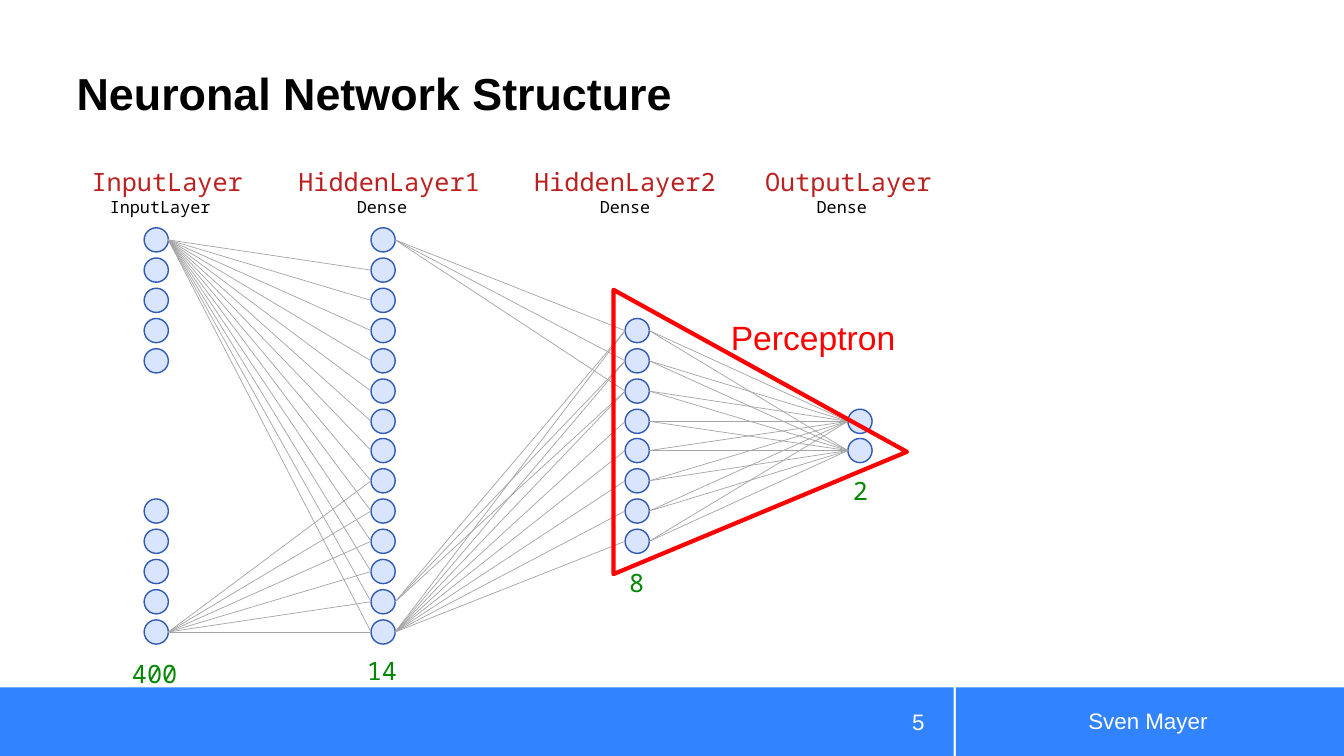
from dataclasses import dataclass

from lxml.etree import SubElement
from pptx import Presentation
from pptx.dml.color import RGBColor
from pptx.enum.shapes import MSO_CONNECTOR as Connector, MSO_SHAPE as Preset
from pptx.enum.text import MSO_ANCHOR as Anchor, MSO_AUTO_SIZE as AutoSize, PP_ALIGN as Align
from pptx.oxml.ns import qn
from pptx.shapes.base import BaseShape
from pptx.slide import Slide
from pptx.text.text import TextFrame
from pptx.util import Emu, Pt

EMU_PER_PX = 9144  # 100 px to the inch
NODE = 24
FIRST_ROW_TOP, LAST_ROW_TOP, LAST_ROW = 226, 615, 13
SANS, MONO = "Arial", "Noto Sans Mono"
COLORS = {
    "bar": "3183FF",
    "node": "D9E5FF",
    "node_edge": "315AB5",
    "link": "A5A5A5",
    "count": "008800",
    "layer": "BA2120",
    "perceptron": "FF0000",
    "black": "000000",
    "white": "FFFFFF",
}


@dataclass(frozen=True)
class Layer:
    left: int
    rows: tuple[int, ...]


@dataclass(frozen=True)
class Fan:
    """Links from one node to several rows of the next layer."""
    source: Layer
    row: int
    target: Layer
    target_rows: tuple[int, ...]


@dataclass(frozen=True)
class Caption:
    text: str
    box: tuple[int, int, int, int]
    size: int
    color: str
    font: str = MONO
    align: Align = Align.LEFT
    anchor: Anchor = Anchor.TOP
    wrap: bool = False


INPUT = Layer(143, (*range(5), *range(9, 14)))
HIDDEN_1 = Layer(368, tuple(range(14)))
HIDDEN_2 = Layer(620, tuple(range(3, 11)))
OUTPUT = Layer(841, (6, 7))
LAYERS = (HIDDEN_1, OUTPUT, HIDDEN_2, INPUT)

FANS = (
    Fan(INPUT, 0, HIDDEN_1, HIDDEN_1.rows[1:]),
    Fan(INPUT, 13, HIDDEN_1, HIDDEN_1.rows[8:]),
    Fan(HIDDEN_1, 13, HIDDEN_2, HIDDEN_2.rows),
    Fan(HIDDEN_1, 12, HIDDEN_2, HIDDEN_2.rows[:3]),
    Fan(HIDDEN_1, 0, HIDDEN_2, HIDDEN_2.rows[:3]),
    *(Fan(HIDDEN_2, row, OUTPUT, OUTPUT.rows) for row in HIDDEN_2.rows),
)

FOOTER_BARS = ((0, 682, 946, 68), (948, 682, 385, 68))
FOOTER = (
    Caption("Sven Mayer", (961, 695, 355, 40), 16, "white", SANS, Align.CENTER, Anchor.MIDDLE, True),
    Caption("5", (841, 696, 86, 40), 16, "white", SANS, Align.RIGHT, Anchor.MIDDLE, True),
)
NODE_COUNTS = tuple(
    Caption(count, (left, top, width, 40), 18, "count")
    for count, left, top, width in (
        ("14", 354, 645, 50), ("8", 614, 558, 35), ("2", 836, 467, 35), ("400", 121, 648, 68))
)
LAYER_NAMES = tuple(
    Caption(name, (left, 160, width, 40), 18, "layer")
    for name, left, width in (
        ("InputLayer", 81, 171), ("HiddenLayer1", 286, 201),
        ("HiddenLayer2", 520, 201), ("OutputLayer", 749, 186))
)
LAYER_TYPES = (
    Caption("InputLayer", (99, 190, 122, 30), 12, "black"),
    *(Caption("Dense", (left, 190, 234, 30), 12, "black", align=Align.CENTER, wrap=True)
      for left in (262, 503, 718)),
)
PERCEPTRON = Caption("Perceptron", (715, 309, 185, 50), 24, "perceptron", SANS)


def px(*lengths: int) -> list[Emu]:
    return [Emu(length * EMU_PER_PX) for length in lengths]


def rgb(name: str) -> RGBColor:
    return RGBColor.from_string(COLORS[name])


def row_top(row: int) -> int:
    return round(FIRST_ROW_TOP + (LAST_ROW_TOP - FIRST_ROW_TOP) * row / LAST_ROW)


def paint(shape: BaseShape, fill: str | None, edge: str | None = None, width: float = 1) -> None:
    shape.shadow.inherit = False
    if fill:
        shape.fill.solid()
        shape.fill.fore_color.rgb = rgb(fill)
    else:
        shape.fill.background()
    if edge:
        shape.line.color.rgb = rgb(edge)
        shape.line.width = Pt(width)
    else:
        shape.line.fill.background()


def write(frame: TextFrame, caption: Caption, bold: bool = False) -> None:
    frame.word_wrap = caption.wrap
    frame.auto_size = AutoSize.NONE
    frame.vertical_anchor = caption.anchor
    paragraph = frame.paragraphs[0]
    paragraph.alignment = caption.align
    run = paragraph.add_run()
    run.text = caption.text
    run.font.name = caption.font
    run.font.size = Pt(caption.size)
    run.font.bold = bold
    run.font.color.rgb = rgb(caption.color)


def add_captions(slide: Slide, captions: tuple[Caption, ...]) -> None:
    for caption in captions:
        write(slide.shapes.add_textbox(*px(*caption.box)).text_frame, caption)


def set_title(slide: Slide) -> None:
    caption = Caption("Neuronal Network Structure", (76, 13, 870, 106), 32, "black", SANS,
                      anchor=Anchor.BOTTOM, wrap=True)
    title = slide.shapes.title
    title.left, title.top, title.width, title.height = px(*caption.box)
    frame = title.text_frame
    frame.margin_left = frame.margin_right = frame.margin_top = frame.margin_bottom = 0
    write(frame, caption, bold=True)
    frame.paragraphs[0].line_spacing = 0.9


def add_footer(slide: Slide) -> None:
    for bar in FOOTER_BARS:
        paint(slide.shapes.add_shape(Preset.RECTANGLE, *px(*bar)), "bar")
    add_captions(slide, FOOTER)


def add_layer(slide: Slide, layer: Layer) -> None:
    group = slide.shapes.add_group_shape()
    for row in layer.rows:
        box = px(layer.left, row_top(row), NODE, NODE)
        paint(group.shapes.add_shape(Preset.OVAL, *box), "node", "node_edge")


def add_fan(slide: Slide, fan: Fan) -> None:
    start = px(fan.source.left + NODE, row_top(fan.row) + NODE // 2)
    for row in fan.target_rows:
        end = px(fan.target.left, row_top(row) + NODE // 2)
        link = slide.shapes.add_connector(Connector.STRAIGHT, *start, *end)
        link.line.color.rgb = rgb("link")
        link.line.width = Pt(0.5)
        SubElement(link._element.spPr, qn("a:effectLst"))


def add_perceptron(slide: Slide) -> None:
    outline = slide.shapes.add_shape(Preset.ISOSCELES_TRIANGLE, *px(613, 283, 282, 291))
    outline.rotation = 90
    outline.adjustments[0] = 0.57
    paint(outline, None, "perceptron", 3)
    add_captions(slide, (PERCEPTRON,))


def main() -> None:
    deck = Presentation()
    deck.slide_width, deck.slide_height = px(1333, 750)
    slide = deck.slides.add_slide(deck.slide_layouts.get_by_name("Title Only"))
    set_title(slide)
    add_footer(slide)
    for layer in LAYERS:
        add_layer(slide, layer)
    add_captions(slide, NODE_COUNTS)
    for fan in FANS:
        add_fan(slide, fan)
    add_perceptron(slide)
    add_captions(slide, LAYER_NAMES + LAYER_TYPES)
    deck.save("out.pptx")


if __name__ == "__main__":
    main()
